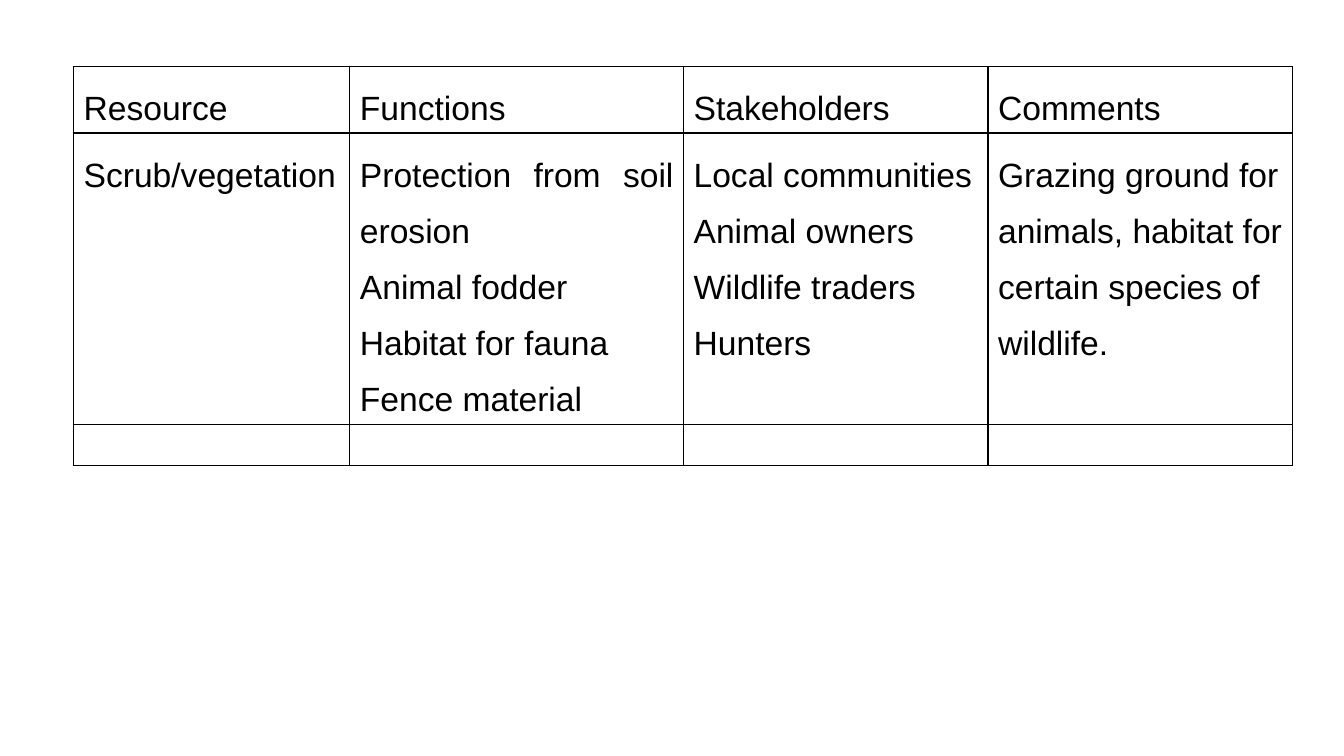
from lxml import etree
from pptx import Presentation
from pptx import util as u
from pptx.dml.color import RGBColor
from pptx.enum import text
from pptx.oxml.ns import qn

COLORS = {"text": "000000", "border": "000000"}
COLUMN_WIDTHS = [2.74, 3.31, 3.02, 3.02]
ROW_HEIGHTS = [0.66, 2.89, 0.41]
ROWS = [
    [["Resource"], ["Functions"], ["Stakeholders"], ["Comments"]],
    [
        ["Scrub/vegetation"],
        ["Protection from soil erosion", "Animal fodder",
         "Habitat for fauna", "Fence material"],
        ["Local communities", "Animal owners", "Wildlife traders", "Hunters"],
        ["Grazing ground for", "animals, habitat for",
         "certain species of", "wildlife."],
    ],
    [[], [], [], []],
]


class SlideBuilder:
    font_name = "Arial"
    font_size = u.Pt(24)
    line_spacing = 1.5
    border_width = u.Pt(1)

    def __init__(self, slide):
        self.slide = slide

    def add_table(self, left, top, widths, heights, rows):
        table = self.slide.shapes.add_table(
            len(heights), len(widths), u.Inches(left), u.Inches(top),
            u.Inches(sum(widths)), u.Inches(sum(heights))).table
        table.first_row = False
        table.horz_banding = False
        for column, width in zip(table.columns, widths):
            column.width = u.Inches(width)
        for row, height, contents in zip(table.rows, heights, rows):
            row.height = u.Inches(height)
            for cell, lines in zip(row.cells, contents):
                self.add_borders(cell)
                cell.fill.background()
                if lines:
                    self.write_lines(cell.text_frame, lines)

    def add_borders(self, cell):
        properties = cell._tc.get_or_add_tcPr()
        for side in ("L", "R", "T", "B"):
            line = etree.SubElement(
                properties, qn(f"a:ln{side}"), w=str(self.border_width))
            fill = etree.SubElement(line, qn("a:solidFill"))
            etree.SubElement(fill, qn("a:srgbClr"), val=COLORS["border"])

    def write_lines(self, frame, lines):
        """Write one justified paragraph for each line."""
        frame.text = "\n".join(lines)
        for paragraph in frame.paragraphs:
            paragraph.alignment = text.PP_ALIGN.JUSTIFY
            paragraph.line_spacing = self.line_spacing
            paragraph.font.name = self.font_name
            paragraph.font.size = self.font_size
            paragraph.font.color.rgb = RGBColor.from_string(COLORS["text"])


def main():
    presentation = Presentation()
    presentation.slide_width = u.Inches(13.33)
    presentation.slide_height = u.Inches(7.5)
    slide = presentation.slides.add_slide(presentation.slide_layouts[6])
    builder = SlideBuilder(slide)
    builder.add_table(0.73, 0.66, COLUMN_WIDTHS, ROW_HEIGHTS, ROWS)
    presentation.save("out.pptx")


if __name__ == "__main__":
    main()
